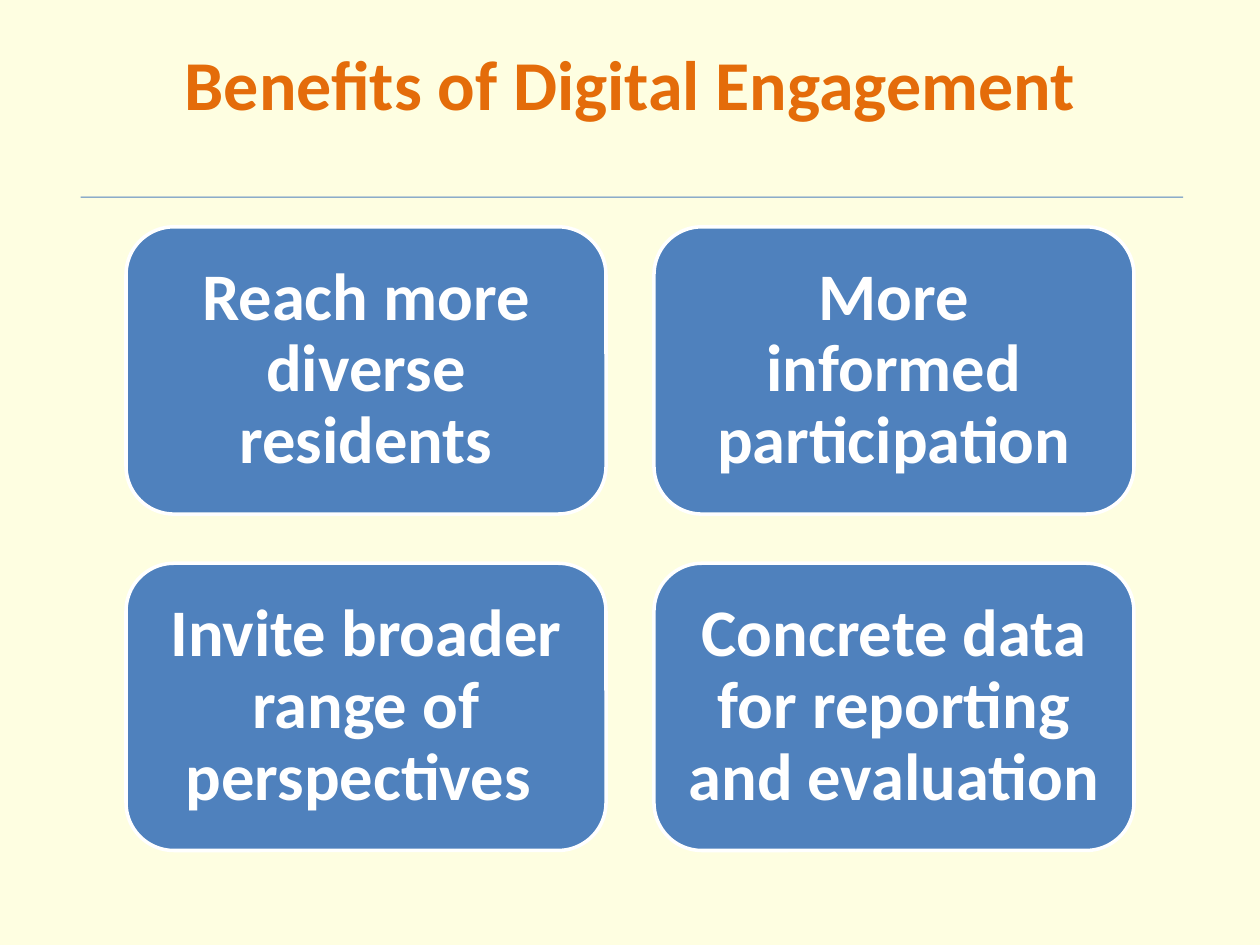
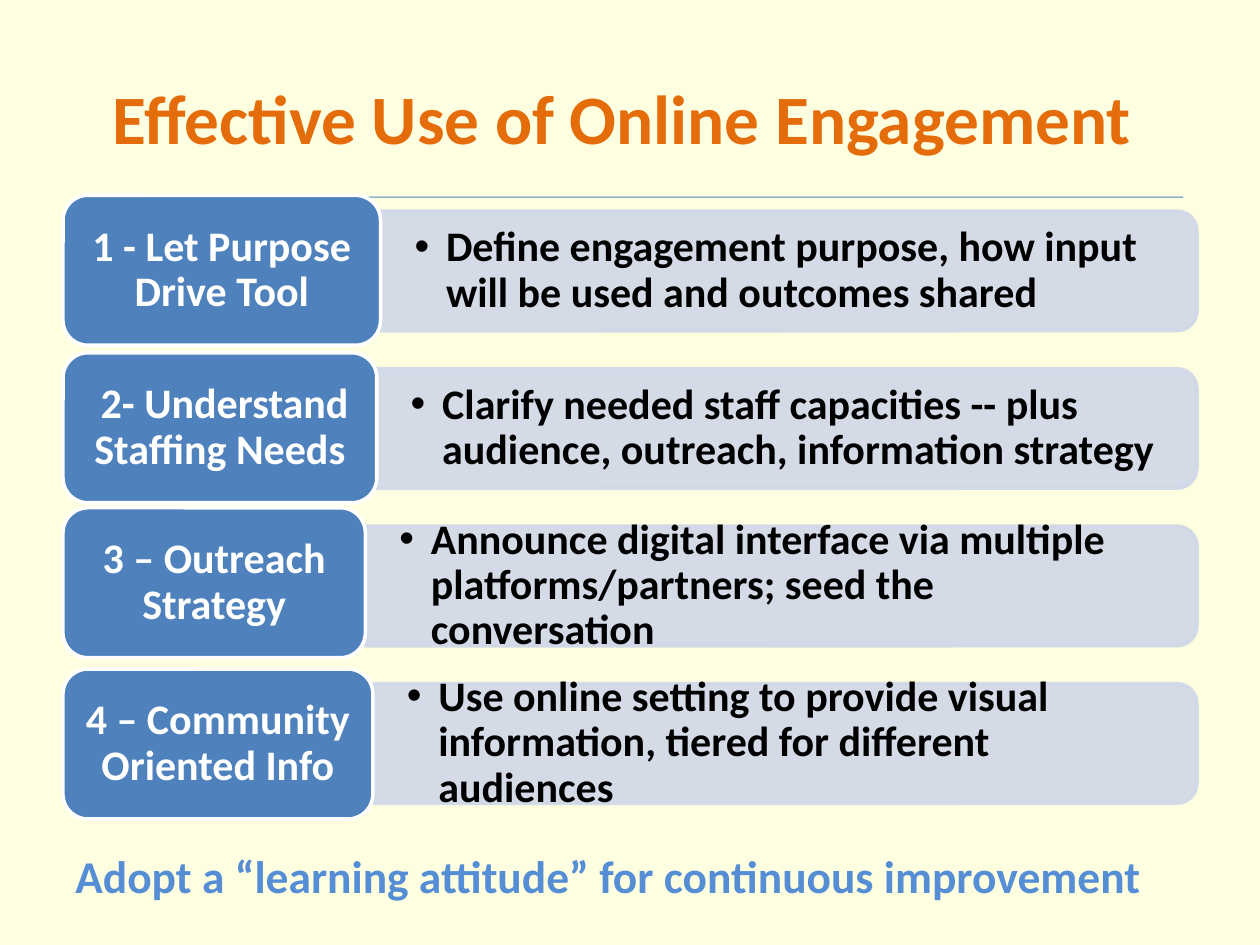
from dataclasses import dataclass

from lxml.etree import SubElement
from pptx import Presentation
from pptx.dml.color import RGBColor as Rgb
from pptx.enum.shapes import MSO_SHAPE as Geo
from pptx.enum.text import MSO_ANCHOR as Anchor, MSO_AUTO_SIZE as Fit, PP_ALIGN as Align
from pptx.oxml.ns import qn
from pptx.util import Inches, Pt


@dataclass(frozen=True)
class Theme:
    font: str = "Calibri"
    paper: str = "FEFEE1"
    head: str = "E46C0A"
    main: str = "4F81BD"
    band: str = "D0D8E8"
    note: str = "558ED5"
    ink: str = "000000"
    white: str = "FFFFFF"
    head_size: float = 40
    card_size: float = 38
    row_size: float = 24
    note_size: float = 26
    edge: float = 2


def rgb(code):
    return Rgb.from_string(code)


def put(frame, words, *, size, color, font, align=Align.CENTER, anchor=Anchor.MIDDLE,
        space=None, inset=(0.1, 0.05), bullet=False, fit=Fit.NONE):
    """Set one bold paragraph in a text frame."""
    frame.word_wrap, frame.auto_size = True, fit
    frame.vertical_anchor = anchor
    frame.margin_left = frame.margin_right = Inches(inset[0])
    frame.margin_top = frame.margin_bottom = Inches(inset[1])
    para = frame.paragraphs[0]
    para.alignment, para.line_spacing = align, space
    run = para.add_run()
    run.text = words
    run.font.name, run.font.size, run.font.bold = font, Pt(size), True
    run.font.color.rgb = rgb(color)
    if bullet:
        props = para._p.get_or_add_pPr()
        props.set("marL", str(Inches(0.25)))
        props.set("indent", str(-Inches(0.25)))
        SubElement(props, qn("a:buFont")).set("typeface", "Arial")
        SubElement(props, qn("a:buChar")).set("char", "•")


class Deck:
    """Places elements on a grid of 100 columns by 75 rows."""
    COLS, ROWS = 100, 75

    def __init__(self, theme):
        self.theme = theme
        self.prs = Presentation()
        self.prs.slide_width, self.prs.slide_height = Inches(10), Inches(7.5)
        fill = self.prs.slide_master.background.fill
        fill.solid()
        fill.fore_color.rgb = rgb(theme.paper)
        self.slide = None

    def box(self, x, y, w, h):
        col = self.prs.slide_width / self.COLS
        row = self.prs.slide_height / self.ROWS
        return round(x * col), round(y * row), round(w * col), round(h * row)

    def label(self, frame, words, **fmt):
        put(frame, words, font=self.theme.font, **fmt)

    def page(self, words, top, high, size):
        """Start a slide with its title and the rule below it."""
        self.slide = self.prs.slides.add_slide(self.prs.slide_layouts[5])
        title = self.slide.shapes.title
        title.left, title.top, title.width, title.height = self.box(5, top, 90, high)
        self.label(title.text_frame, words, size=size, color=self.theme.head)
        self.shape(Geo.RECTANGLE, (6.4, 15.6, 87.5, 0.1), self.theme.main)

    def shape(self, geo, area, fill, edge=None):
        item = self.slide.shapes.add_shape(geo, *self.box(*area))
        item.shadow.inherit = False
        item.fill.solid()
        item.fill.fore_color.rgb = rgb(fill)
        if edge:
            item.line.color.rgb = rgb(edge)
            item.line.width = Pt(self.theme.edge)
        else:
            item.line.fill.background()
        return item

    def card(self, geo, area, words, size, **fmt):
        item = self.shape(geo, area, self.theme.main, self.theme.white)
        self.label(item.text_frame, words, size=size, color=self.theme.white,
                   space=0.9, **fmt)

    def bar(self, left, right, mid, high):
        """Band with rounded right corners: an upright shape turned by 90 degrees."""
        wide = right - left
        area = ((left + right - high) / 2, mid - wide / 2, high, wide)
        item = self.shape(Geo.ROUND_2_SAME_RECTANGLE, area, self.theme.band, self.theme.band)
        item.rotation = 90
        for color in item._element.spPr.iter(qn("a:srgbClr")):
            SubElement(color, qn("a:alpha")).set("val", "90000")

    def text(self, area, words, **fmt):
        item = self.slide.shapes.add_textbox(*self.box(*area))
        self.label(item.text_frame, words, align=Align.LEFT, **fmt)


def benefits(deck):
    theme = deck.theme
    deck.page("Benefits of Digital Engagement", 1.7, 9.7, theme.head_size)
    cards = ["Reach more diverse residents", "More informed participation",
             "Invite broader range of perspectives ",
             "Concrete data for reporting and evaluation"]
    for i, words in enumerate(cards):
        row, col = divmod(i, 2)
        area = (10 + 41.9 * col, 18 + 26.7 * row, 38.1, 22.8)
        deck.card(Geo.FLOWCHART_ALTERNATE_PROCESS, area, words, theme.card_size,
                  inset=(0.16, 0.16))


def usage(deck):
    theme = deck.theme
    deck.page("Effective Use of Online Engagement ", 3, 12.5, theme.head_size - 0.4)
    # Label top, label width, label, detail
    steps = [
        (15.5, 25.2, "1 - Let Purpose Drive Tool",
         "Define engagement purpose, how input will be used and outcomes shared"),
        (28, 24.9, " 2- Understand Staffing Needs",
         "Clarify needed staff capacities -- plus audience, outreach, information strategy"),
        (40.3, 24, "3 – Outreach Strategy",
         "Announce digital interface via multiple platforms/partners; seed the conversation"),
        (53.1, 24.6, "4 – Community Oriented Info",
         "Use online setting to provide visual information, tiered for different audiences"),
    ]
    left, right = 5, 95
    for i, (top, wide, label, detail) in enumerate(steps):
        mid, start = 21.5 + 12.5 * i, left + wide
        deck.bar(start, right, mid, 9.5)
        deck.text((start, mid - 4.3, right - 0.4 - start, 8.6), detail,
                  size=theme.row_size, color=theme.ink, space=0.9,
                  inset=(0.27, 0.14), bullet=True)
        deck.card(Geo.ROUNDED_RECTANGLE, (left, top, wide, 11.9), label, theme.row_size)
    # Closing line
    deck.text((left, 66.8, 92.6, 5.4), "Adopt a “learning attitude” for continuous improvement",
              size=theme.note_size, color=theme.note, anchor=Anchor.TOP,
              fit=Fit.SHAPE_TO_FIT_TEXT)


def main():
    deck = Deck(Theme())
    benefits(deck)
    usage(deck)
    deck.prs.save("out.pptx")


if __name__ == "__main__":
    main()
